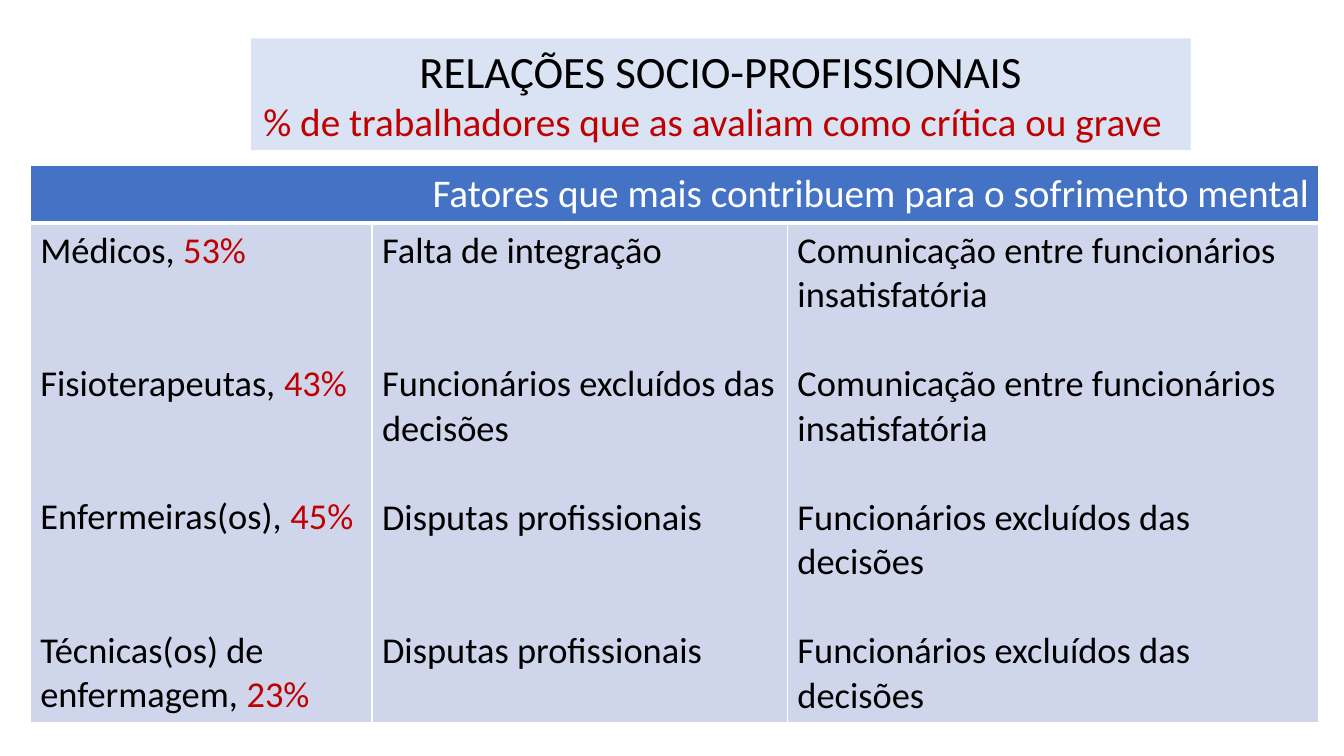
import dataclasses

import lxml.etree
import pptx
import pptx.dml.color
import pptx.enum.shapes
import pptx.enum.text
import pptx.oxml.ns
import pptx.util

PX = 9144
ALIGN = pptx.enum.text.PP_ALIGN


@dataclasses.dataclass(frozen=True)
class Theme:
    """Colours and type sizes of the slide."""
    font: str = "Calibri"
    black: str = "000000"
    white: str = "FFFFFF"
    red: str = "C00000"
    title_fill: str = "DAE3F3"
    header_fill: str = "4472C4"
    body_fill: str = "CFD5EA"
    title_size: int = 32
    subtitle_size: int = 28
    body_size: int = 26
    body_line: float = 31.74


THEME = Theme()
SLOT_LINES = 3
COLUMN_WIDTHS = (339, 412, 527)
ROW_HEIGHTS = (47, 444)
HEADER = "Fatores que mais contribuem para o sofrimento mental"
WORKERS = (
    ("Médicos, ", "53%", 1),
    ("Fisioterapeutas, ", "43%", 1),
    ("Enfermeiras(os), ", "45%", 1),
    ("Técnicas(os) de enfermagem, ", "23%", 2),
)
EXCLUDED = ("Funcionários excluídos das decisões", "", 2)
DISPUTES = ("Disputas profissionais", "", 1)
COMMUNICATION = ("Comunicação entre funcionários insatisfatória", "", 2)
FIRST_FACTORS = (("Falta de integração", "", 1), EXCLUDED, DISPUTES, DISPUTES)
SECOND_FACTORS = (COMMUNICATION, COMMUNICATION, EXCLUDED, EXCLUDED)


def px(*lengths):
    """Turn pixel lengths into EMU."""
    return [pptx.util.Emu(length * PX) for length in lengths]


def paint(target, colour):
    """Fill a shape, cell or line with a solid colour."""
    target.fill.solid()
    target.fill.fore_color.rgb = pptx.dml.color.RGBColor.from_string(colour)


def add_text(paragraph, text, size=THEME.body_size, colour=THEME.black, align=ALIGN.LEFT):
    """Append a formatted run to a paragraph."""
    paragraph.alignment = align
    run = paragraph.add_run()
    run.text = text
    run.font.name = THEME.font
    run.font.size = pptx.util.Pt(size)
    run.font.color.rgb = pptx.dml.color.RGBColor.from_string(colour)


def add_borders(cell, bottom=1):
    """Draw white borders around a cell."""
    properties = cell._tc.get_or_add_tcPr()
    widths = {"a:lnL": 1, "a:lnR": 1, "a:lnT": 1, "a:lnB": bottom}
    for index, (tag, width) in enumerate(widths.items()):
        line = lxml.etree.Element(pptx.oxml.ns.qn(tag), w=str(pptx.util.Pt(width)))
        fill = lxml.etree.SubElement(line, pptx.oxml.ns.qn("a:solidFill"))
        lxml.etree.SubElement(fill, pptx.oxml.ns.qn("a:srgbClr"), val=THEME.white)
        properties.insert(index, line)


def fill_body_cell(cell, entries):
    """Stack entries in a cell so that each occupies a slot of equal height."""
    paint(cell, THEME.body_fill)
    add_borders(cell)
    gap = 0
    for index, (text, share, lines) in enumerate(entries):
        frame = cell.text_frame
        paragraph = frame.add_paragraph() if index else frame.paragraphs[0]
        paragraph.space_before = pptx.util.Pt(gap)
        add_text(paragraph, text)
        if share:
            add_text(paragraph, share, colour=THEME.red)
        gap = (SLOT_LINES - lines) * THEME.body_line


def add_factors_table(slide, left, top, width, height):
    """Place the table of factors in its box."""
    graphic = slide.shapes.add_table(2, 3, *px(left, top, width, height))
    table = graphic.table
    for column, column_width in zip(table.columns, px(*COLUMN_WIDTHS)):
        column.width = column_width
    for row, row_height in zip(table.rows, px(*ROW_HEIGHTS)):
        row.height = row_height
    graphic.height = px(height)[0]
    for cell in table.rows[0].cells:
        paint(cell, THEME.header_fill)
        add_borders(cell, bottom=3)
    header = table.cell(0, 0)
    header.merge(table.cell(0, 2))
    add_text(header.text_frame.paragraphs[0], HEADER, size=THEME.subtitle_size,
             colour=THEME.white, align=ALIGN.RIGHT)
    for cell, entries in zip(table.rows[1].cells, (WORKERS, FIRST_FACTORS, SECOND_FACTORS)):
        fill_body_cell(cell, entries)


def add_title(slide, left, top, width, height):
    """Place the title panel in its box."""
    panel = slide.shapes.add_shape(
        pptx.enum.shapes.MSO_SHAPE.RECTANGLE, *px(left, top, width, height))
    panel.shadow.inherit = False
    paint(panel, THEME.title_fill)
    panel.line.fill.background()
    frame = panel.text_frame
    frame.word_wrap = True
    frame.vertical_anchor = pptx.enum.text.MSO_ANCHOR.TOP
    add_text(frame.paragraphs[0], "RELAÇÕES SOCIO-PROFISSIONAIS",
             size=THEME.title_size, align=ALIGN.CENTER)
    subtitle = frame.add_paragraph()
    add_text(subtitle, "% de trabalhadores que as avaliam como crítica ou grave",
             size=THEME.subtitle_size, colour=THEME.red, align=ALIGN.CENTER)
    subtitle._p.get_or_add_pPr().set("marR", str(px(17)[0]))


def main():
    """Build and save the presentation."""
    presentation = pptx.Presentation()
    presentation.slide_width, presentation.slide_height = px(1333, 750)
    slide = presentation.slides.add_slide(presentation.slide_layouts[6])
    add_factors_table(slide, 30, 164, sum(COLUMN_WIDTHS), 543)
    add_title(slide, 249, 38, 932, 111)
    presentation.save("out.pptx")


if __name__ == "__main__":
    main()
